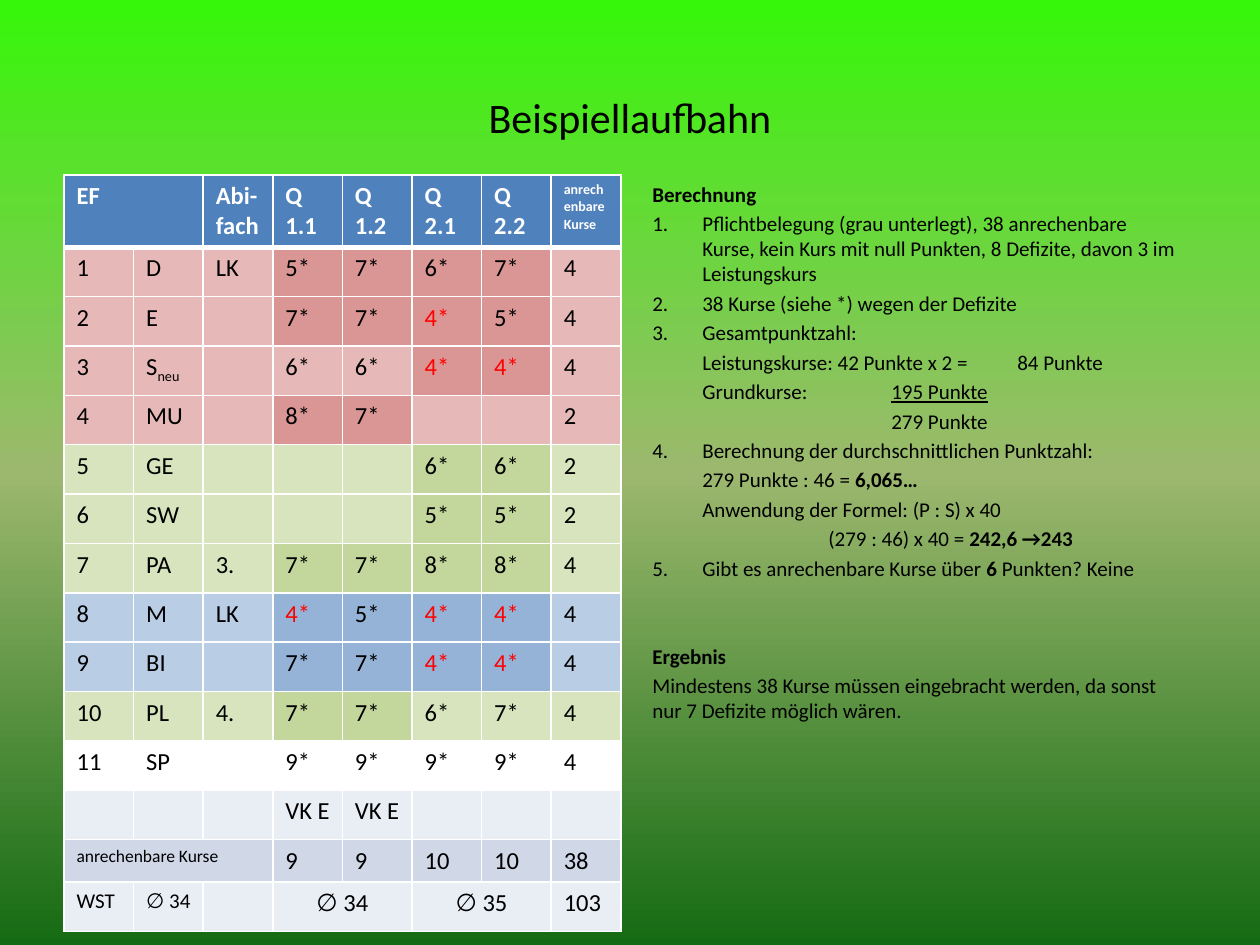
import copy
from dataclasses import dataclass
from typing import NamedTuple

import lxml.etree
import pptx
import pptx.dml.color
import pptx.enum.text
import pptx.oxml.ns
import pptx.util

qn = pptx.oxml.ns.qn
Align = pptx.enum.text.PP_ALIGN
PX_PER_INCH = 126


@dataclass(frozen=True)
class Theme:
    font: str = "Calibri"
    title: int = 24
    grade: int = 14
    body: int = 12
    label: int = 10
    tiny: int = 8
    text: str = "000000"
    white: str = "FFFFFF"
    deficit: str = "FF0000"
    header: str = "4F81BD"
    band: str = "D0D8E8"
    pale: str = "E9EDF4"
    backdrop: tuple = ("36F709", "9CB86E", "156B13")


T = Theme()


class Palette(NamedTuple):
    light: str
    dark: str


RED = Palette("E6B9B8", "D99694")
GREEN = Palette("D7E4BD", "C3D69B")
BLUE = Palette("B9CDE5", "95B3D7")
HEAD, WHITE, PALE, BAND = (Palette(c, c) for c in (T.header, T.white, T.pale, T.band))


class Row(NamedTuple):
    cells: str
    palette: Palette
    dark: tuple = ()   # columns of compulsory courses


class Run(NamedTuple):
    text: str
    bold: bool = False
    underline: bool = False


class Para(NamedTuple):
    runs: tuple
    number: int = 0
    indent: int = 50
    before: float = 2.4


ALL, FIRST, LAST = (3, 4, 5, 6), (3, 4), (5, 6)
ROWS = [
    Row("EF||Abi-fach|Q 1.1|Q 1.2|Q 2.1|Q 2.2|anrechenbare Kurse", HEAD),
    Row("1|D|LK|5*|7*|6*|7*|4", RED, ALL),
    Row("2|E||7*|7*|4*|5*|4", RED, ALL),
    Row("3|S_neu||6*|6*|4*|4*|4", RED, LAST),
    Row("4|MU||8*|7*|||2", RED, FIRST),
    Row("5|GE||||6*|6*|2", GREEN, LAST),
    Row("6|SW||||5*|5*|2", GREEN, LAST),
    Row("7|PA|3.|7*|7*|8*|8*|4", GREEN, ALL),
    Row("8|M|LK|4*|5*|4*|4*|4", BLUE, ALL),
    Row("9|BI||7*|7*|4*|4*|4", BLUE, ALL),
    Row("10|PL|4.|7*|7*|6*|7*|4", GREEN, FIRST),
    Row("11|SP||9*|9*|9*|9*|4", WHITE),
    Row("|||VK E|VK E|||", PALE),
    Row("anrechenbare Kurse|||9|9|10|10|38", BAND),
    Row("WST|∅ 34||∅ 34||∅ 35||103", PALE),
]
MERGES = [(0, 0, 1), (13, 0, 2), (14, 3, 4), (14, 5, 6)]   # row, first and last column
SIZES = {(0, 7): T.tiny, (13, 0): T.label, (14, 0): T.body, (14, 1): T.body}
CENTRED = {(14, 3), (14, 5)}

PARAS = [
    Para((Run("Berechnung", True),), indent=0),
    Para((Run("Pflichtbelegung (grau unterlegt), 38 anrechenbare Kurse, kein Kurs mit "
              "null Punkten, 8 Defizite, davon 3 im Leistungskurs"),), 1),
    Para((Run("38 Kurse (siehe *) wegen der Defizite"),), 2),
    Para((Run("Gesamtpunktzahl:"),), 3),
    Para((Run("Leistungskurse: 42 Punkte x 2 =\t84 Punkte"),)),
    Para((Run("Grundkurse:\t\t"), Run("195 Punkte", underline=True))),
    Para((Run("\t\t\t279 Punkte"),)),
    Para((Run("Berechnung der durchschnittlichen Punktzahl:"),), 4),
    Para((Run("279 Punkte : 46 = "), Run("6,065…", True))),
    Para((Run("Anwendung der Formel: (P : S) x 40"),)),
    Para((Run("\t\t(279 : 46) x 40 = "), Run("242,6 →243", True))),
    Para((Run("Gibt es anrechenbare Kurse über "), Run("6 ", True),
          Run("Punkten? Keine")), 5),
    Para((Run("Ergebnis", True),), indent=0, before=36),
    Para((Run("Mindestens 38 Kurse müssen eingebracht werden, da sonst nur 7 Defizite "
              "möglich wären."),), indent=0),
]


def px(n: int) -> int:
    return round(n * pptx.util.Inches(1) / PX_PER_INCH)


def rgb(value: str):
    return pptx.dml.color.RGBColor.from_string(value)


def set_font(p, size: int, color: str = T.text) -> None:
    p.font.name, p.font.size = T.font, pptx.util.Pt(size)
    p.font.color.rgb = rgb(color)


def paint_background(s) -> None:
    fill = s.background.fill
    fill.gradient()
    fill.gradient_angle = 270
    first = fill.gradient_stops[0]._gs
    first.addnext(copy.deepcopy(first))
    for stop, color, pos in zip(fill.gradient_stops, T.backdrop, (0, 0.5, 1)):
        stop.color.rgb, stop.position = rgb(color), pos


def set_borders(cell, top: int, bottom: int) -> None:
    tcPr = cell._tc.get_or_add_tcPr()
    sides = (("lnL", 1), ("lnR", 1), ("lnT", top), ("lnB", bottom))
    for i, (side, width) in enumerate(sides):
        ln = lxml.etree.Element(qn(f"a:{side}"), w=str(pptx.util.Pt(width)))
        solid = lxml.etree.SubElement(ln, qn("a:solidFill"))
        lxml.etree.SubElement(solid, qn("a:srgbClr"), val=T.white)
        tcPr.insert(i, ln)


def fill_cell(cell, text: str, row: int, col: int) -> None:
    palette = ROWS[row].palette
    cell.fill.solid()
    cell.fill.fore_color.rgb = rgb(palette.dark if col in ROWS[row].dark else palette.light)
    set_borders(cell, 3 if row == 1 else 1, 3 if row == 0 else 1)
    p = cell.text_frame.paragraphs[0]
    size = SIZES.get((row, col), T.grade)
    set_font(p, size, T.white if row == 0 else T.deficit if text == "4*" else T.text)
    p.font.bold = row == 0
    if (row, col) in CENTRED:
        p.alignment = Align.CENTER
    base, _, sub = text.partition("_")
    if base:
        p.add_run().text = base
    else:
        lxml.etree.SubElement(p._p, qn("a:endParaRPr"), sz=str(size * 100))
    if sub:
        r = p.add_run()
        r.text = sub
        r._r.get_or_add_rPr().set("baseline", "-25000")


def add_grades(s) -> None:
    table = s.shapes.add_table(len(ROWS), 8, px(64), px(175), px(557), px(755)).table
    for i, row in enumerate(ROWS):
        table.rows[i].height = {0: px(69), 13: px(29)}.get(i, px(642) // 13)
        for j, text in enumerate(row.cells.split("|")):
            fill_cell(table.cell(i, j), text, i, j)
    for i, first, last in MERGES:
        table.cell(i, first).merge(table.cell(i, last))


def add_calculation(s) -> None:
    tf = s.shapes.add_textbox(px(640), px(175), px(557), px(669)).text_frame
    tf.word_wrap = True
    for i, para in enumerate(PARAS):
        p = tf.add_paragraph() if i else tf.paragraphs[0]
        set_font(p, T.body)
        p.space_before = pptx.util.Pt(para.before)
        pPr = p._p.get_or_add_pPr()
        pPr.set("marL", str(px(para.indent)))
        pPr.set("indent", str(-px(para.indent) if para.number else 0))
        if para.number:
            bullet = lxml.etree.Element(qn("a:buAutoNum"), type="arabicPeriod",
                                        startAt=str(para.number))
            pPr.find(qn("a:defRPr")).addprevious(bullet)
        for run in para.runs:
            r = p.add_run()
            r.text = run.text
            if run.bold:
                r.font.bold = True
            if run.underline:
                r.font.underline = True


def main() -> None:
    prs = pptx.Presentation()
    prs.slide_width, prs.slide_height = px(1260), px(945)
    s = prs.slides.add_slide(prs.slide_layouts[5])
    paint_background(s)

    # Title
    title = s.shapes.title
    title.left, title.top, title.width, title.height = px(63), px(38), px(1134), px(157)
    title.text_frame.text = "Beispiellaufbahn"
    set_font(title.text_frame.paragraphs[0], T.title)

    # Course table on the left, calculation on the right
    add_grades(s)
    add_calculation(s)
    prs.save("out.pptx")


if __name__ == "__main__":
    main()
